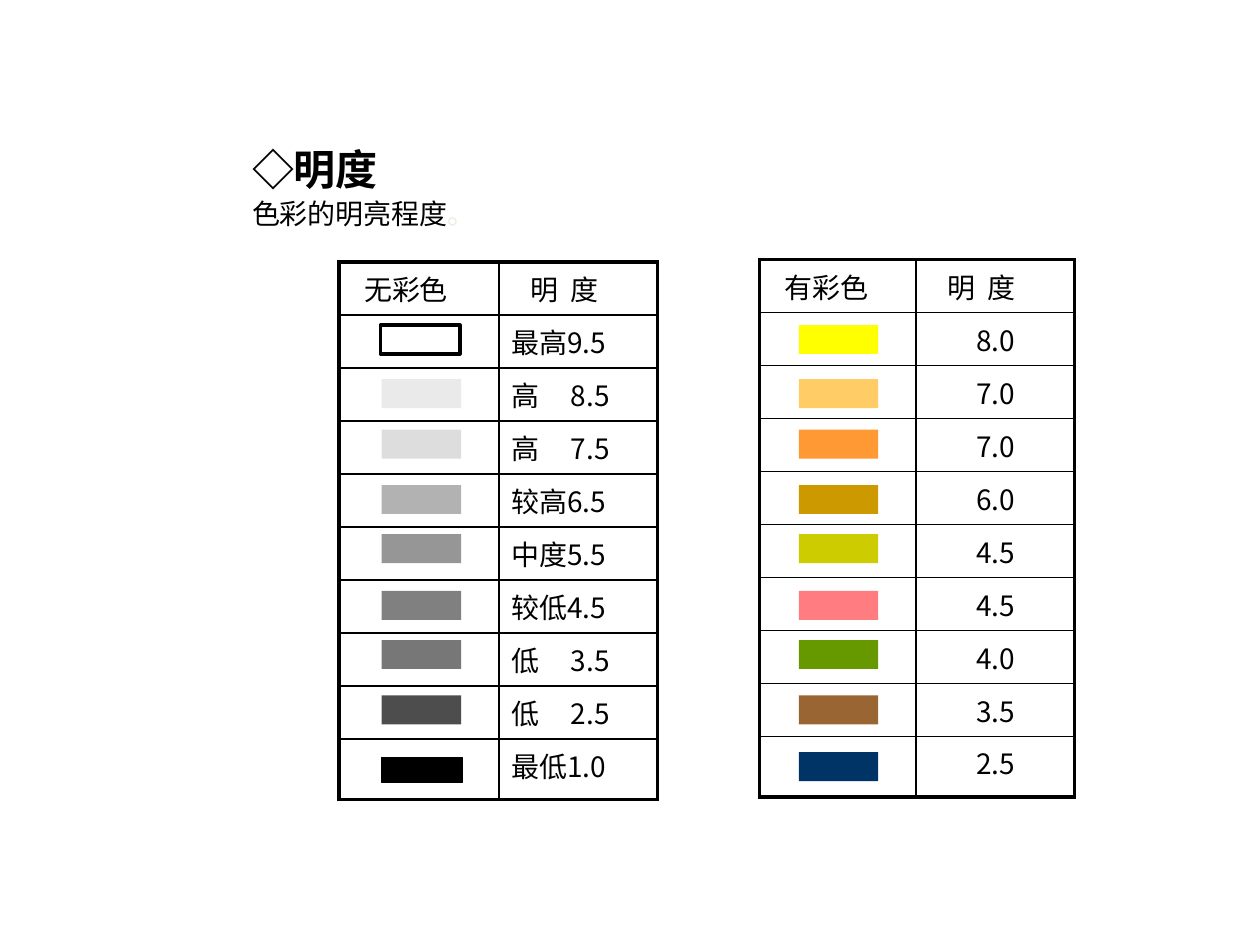
from dataclasses import dataclass

from lxml import etree
from pptx import Presentation
from pptx.dml.color import RGBColor
from pptx.enum.shapes import MSO_SHAPE
from pptx.enum.text import MSO_ANCHOR, PP_ALIGN
from pptx.oxml.ns import qn
from pptx.util import Inches, Pt

RECT = MSO_SHAPE.RECTANGLE
TOP = MSO_ANCHOR.TOP
LEFT, MID = PP_ALIGN.LEFT, PP_ALIGN.CENTER

BLACK = RGBColor(0x00, 0x00, 0x00)
WHITE = RGBColor(0xFF, 0xFF, 0xFF)
CREAM = RGBColor(0xEE, 0xEC, 0xE1)
GREYS = [RGBColor(v, v, v) for v in (0xEA, 0xDD, 0xB2, 0x96, 0x80, 0x77, 0x4D)]
HUES = [
    RGBColor(0xFF, 0xFF, 0x00),
    RGBColor(0xFF, 0xCC, 0x66),
    RGBColor(0xFF, 0x99, 0x33),
    RGBColor(0xCC, 0x99, 0x00),
    RGBColor(0xCC, 0xCC, 0x00),
    RGBColor(0xFF, 0x7C, 0x80),
    RGBColor(0x66, 0x99, 0x00),
    RGBColor(0x99, 0x66, 0x33),
    RGBColor(0x00, 0x33, 0x66),
]

SANS, LATIN = "Noto Sans CJK SC", "Calibri"
THICK, THIN = 2.25, 1
ROW, LAST = 0.42, 0.48
TOPS = [2.58, 3.01, 3.41, 3.85, 4.24, 4.69, 5.08, 5.52, 5.97]


@dataclass
class Scale:
    head: str
    left: float
    top: float
    cols: tuple[float, float]
    vals: list[str]
    align: PP_ALIGN


@dataclass
class Swatch:
    left: float
    top: float
    fill: RGBColor
    line: float = 0
    wide: float = 0.63
    high: float = 0.23


SCALES = [
    Scale("无彩色", 2.69, 2.08, (1.27, 1.26),
          ["最高9.5", "高\t8.5", "高\t7.5", "较高6.5", "中度5.5",
           "较低4.5", "低\t3.5", "低\t2.5", "最低1.0"], LEFT),
    Scale("有彩色", 6.03, 2.06, (1.24, 1.26),
          ["8.0", "7.0", "7.0", "6.0", "4.5", "4.5", "4.0", "3.5", "2.5"], MID),
]
SWATCHES = [
    Swatch(3.02, TOPS[0], WHITE, line=2),
    *(Swatch(3.03, top, fill) for top, fill in zip(TOPS[1:], GREYS)),
    Swatch(3.03, 6.01, BLACK, line=0.75, wide=0.64, high=0.2),
    *(Swatch(6.34, top, fill) for top, fill in zip(TOPS, HUES)),
]


def add_run(para, text: str, size: float, color: RGBColor = BLACK,
            face: str = SANS, bold: bool = False) -> None:
    run = para.add_run()
    run.text = text
    font = run.font
    font.name, font.size, font.bold = face, Pt(size), bold
    font.color.rgb = color
    east = etree.SubElement(run._r.get_or_add_rPr(), qn("a:ea"))
    east.set("typeface", SANS)


def set_place(holder, top: float, high: float):
    """Move a placeholder and return its first paragraph, without bullet."""
    holder.left, holder.top = Inches(1.9), Inches(top)
    holder.width, holder.height = Inches(7.38), Inches(high)
    frame = holder.text_frame
    frame.word_wrap = True
    frame.vertical_anchor = TOP
    para = frame.paragraphs[0]
    props = para._p.get_or_add_pPr()
    props.set("marL", "0")
    props.set("indent", "0")
    etree.SubElement(props, qn("a:buNone"))
    para.alignment = LEFT
    para.space_before = Pt(0)
    return para


def add_tab(para, pos: float) -> None:
    tabs = etree.SubElement(para._p.get_or_add_pPr(), qn("a:tabLst"))
    etree.SubElement(tabs, qn("a:tab"), pos=str(Inches(pos)), algn="l")


def set_edges(cell, widths: dict[str, float]) -> None:
    props = cell._tc.get_or_add_tcPr()
    for spot, (side, width) in enumerate(widths.items()):
        line = etree.Element(qn(f"a:ln{side}"), w=str(Pt(width)))
        fill = etree.SubElement(line, qn("a:solidFill"))
        etree.SubElement(fill, qn("a:srgbClr"), val=str(BLACK))
        props.insert(spot, line)


def fill_cell(cell, text: str, align: PP_ALIGN, inset: float) -> None:
    cell.margin_left = Inches(inset)
    para = cell.text_frame.paragraphs[0]
    if "\t" in text:
        add_tab(para, 0.57 - inset)
    para.alignment = align
    if text:
        add_run(para, text, 16)


def draw_scale(slide, scale: Scale) -> None:
    rows = [(scale.head, "明\t度")] + [("", val) for val in scale.vals]
    end = len(rows) - 1
    table = slide.shapes.add_table(
        len(rows), 2, Inches(scale.left), Inches(scale.top),
        Inches(sum(scale.cols)), Inches(ROW * end + LAST)).table
    table.first_row = table.horz_banding = False
    for col, width in zip(table.columns, scale.cols):
        col.width = Inches(width)
    for r, texts in enumerate(rows):
        table.rows[r].height = Inches(LAST if r == end else ROW)
        for c, text in enumerate(texts):
            cell = table.cell(r, c)
            cell.fill.background()
            set_edges(cell, {
                "L": THIN if c else THICK,
                "R": THICK if c else THIN,
                "T": THIN if r else THICK,
                "B": THICK if r == end else THIN,
            })
            if r == 0:
                fill_cell(cell, text, LEFT, 0.25 if c else 0.2)
            else:
                fill_cell(cell, text, scale.align, 0.1)


def draw_swatch(slide, item: Swatch) -> None:
    shape = slide.shapes.add_shape(
        RECT, Inches(item.left), Inches(item.top),
        Inches(item.wide), Inches(item.high))
    shape.shadow.inherit = False
    shape.fill.solid()
    shape.fill.fore_color.rgb = item.fill
    if item.line:
        shape.line.color.rgb = BLACK
        shape.line.width = Pt(item.line)
    else:
        shape.line.fill.background()


def main() -> None:
    deck = Presentation()
    deck.slide_width, deck.slide_height = Inches(10), Inches(7.5)
    slide = deck.slides.add_slide(deck.slide_layouts[1])

    # Heading and its meaning
    title = set_place(slide.shapes.title, 1.09, 0.5)
    add_run(title, "◇明度", 24, face=LATIN, bold=True)
    body = set_place(slide.placeholders[1], 1.51, 0.42)
    add_run(body, "色彩的明亮程度", 16)
    add_run(body, "。", 16, CREAM)

    # Tables of lightness, then the colour samples on top
    for scale in SCALES:
        draw_scale(slide, scale)
    for item in SWATCHES:
        draw_swatch(slide, item)

    deck.save("out.pptx")


if __name__ == "__main__":
    main()
